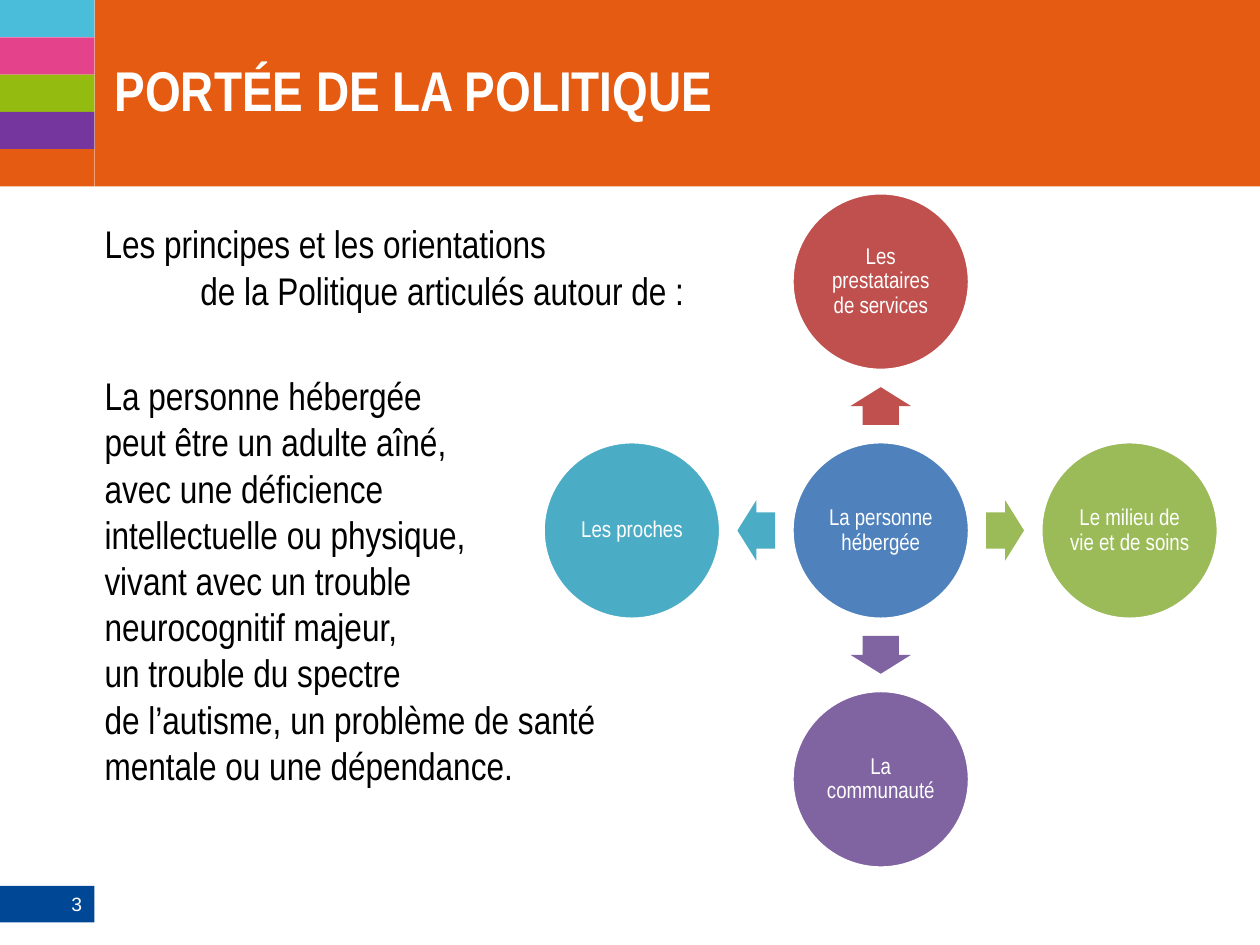
from dataclasses import dataclass

from lxml import etree
from pptx import Presentation
from pptx.dml.color import RGBColor
from pptx.enum import shapes, text
from pptx.util import Inches, Pt


@dataclass(frozen=True)
class Theme:
    font: str = "Arial Narrow"
    number_font: str = "Arial"
    title: int = 32
    body: int = 22
    label: int = 13
    number: int = 11
    white: str = "FFFFFF"
    black: str = "000000"
    orange: str = "E55B12"
    navy: str = "004796"
    hub: str = "4F81BD"
    stripes: tuple = ("4ABDDB", "E5428C", "94BC10", "75369E", "E55B12")


THEME = Theme()

INTRO = "Les principes et les orientations\vde la Politique articulés autour de :"
PERSON = [
    "La personne hébergée",
    "peut être un adulte aîné,",
    "avec une déficience\vintellectuelle ou physique,\vvivant avec un trouble\v"
    "neurocognitif majeur,\vun trouble du spectre\v"
    "de l’autisme, un problème de santé\vmentale ou une dépendance.",
]
# Label, colour, horizontal and vertical direction from the hub, arrow rotation
SPOKES = [
    ("Les prestataires de services", "C0504D", 0, -1, 270),
    ("Le milieu de vie et de soins", "9BBB59", 1, 0, 0),
    ("La communauté", "8064A2", 0, 1, 90),
    ("Les proches", "4BACC6", -1, 0, 180),
]


def set_font(p, size, color, name=THEME.font, bold=False):
    p.font.name, p.font.size, p.font.bold = name, Pt(size), bold
    p.font.color.rgb = RGBColor.from_string(color)


def set_insets(tf, inset):
    tf.margin_left = tf.margin_right = tf.margin_top = tf.margin_bottom = Inches(inset)


def add_filled(slide, kind, box, color):
    sp = slide.shapes.add_shape(kind, *map(Inches, box))
    sp.shadow.inherit = False
    sp.fill.solid()
    sp.fill.fore_color.rgb = RGBColor.from_string(color)
    sp.line.fill.background()
    return sp


def add_header(slide, left, top, width, height, stripe_width):
    rect = shapes.MSO_SHAPE.RECTANGLE
    band = add_filled(slide, rect, (left + stripe_width, top, width - stripe_width, height),
                      THEME.orange)
    step = height / len(THEME.stripes)
    for i, color in enumerate(THEME.stripes):
        add_filled(slide, rect, (left, top + i * step, stripe_width, step), color)

    title = slide.shapes.title
    band.element.addnext(title.element)
    title.left, title.top = Inches(left + 0.91), Inches(top + 0.44)
    title.width, title.height = Inches(8.82), Inches(1.09)
    tf = title.text_frame
    tf.text = "PORTÉE DE LA POLITIQUE"
    tf.vertical_anchor = text.MSO_ANCHOR.TOP
    tf.auto_size = text.MSO_AUTO_SIZE.NONE
    set_insets(tf, 0)
    p = tf.paragraphs[0]
    p.alignment = text.PP_ALIGN.LEFT
    set_font(p, THEME.title, THEME.white, bold=True)


def add_body(slide, *box):
    tf = slide.shapes.add_textbox(*map(Inches, box)).text_frame
    tf.word_wrap = True
    set_insets(tf, 0)
    for i, line in enumerate([INTRO, *PERSON]):
        p = tf.paragraphs[0] if i == 0 else tf.add_paragraph()
        p.text = line
        set_font(p, THEME.body, THEME.black)
    intro, person = tf.paragraphs[:2]
    # Hanging indent: only the second line of the introduction is set in
    pPr = intro._p.get_or_add_pPr()
    pPr.set("marL", str(Inches(0.76)))
    pPr.set("indent", str(-Inches(0.76)))
    person.space_before = Pt(34)


def add_circle(slide, cx, cy, size, label, color):
    sp = add_filled(slide, shapes.MSO_SHAPE.OVAL,
                    (cx - size / 2, cy - size / 2, size, size), color)
    sp.line.color.rgb = RGBColor.from_string(THEME.white)
    sp.line.width = Pt(2)
    tf = sp.text_frame
    tf.word_wrap = True
    tf.vertical_anchor = text.MSO_ANCHOR.MIDDLE
    set_insets(tf, 0.02)
    tf.text = label
    for p in tf.paragraphs:
        p.alignment = text.PP_ALIGN.CENTER
        p.line_spacing = 0.9
        set_font(p, THEME.label, THEME.white)


def add_radial(slide, left, top, size):
    """Hub with four circles around it, in a square box."""
    circle = 1.41
    radius = (size - circle) / 2
    arrow_w, arrow_h = 0.3, 0.48
    cx, cy = left + size / 2, top + size / 2
    add_circle(slide, cx, cy, circle, "La personne\nhébergée", THEME.hub)
    for label, color, dx, dy, angle in SPOKES:
        ax, ay = cx + dx * radius / 2, cy + dy * radius / 2
        arrow = add_filled(slide, shapes.MSO_SHAPE.RIGHT_ARROW,
                           (ax - arrow_w / 2, ay - arrow_h / 2, arrow_w, arrow_h), color)
        arrow.adjustments[0], arrow.adjustments[1] = 0.6, 0.5
        arrow.rotation = angle
        add_circle(slide, cx + dx * radius, cy + dy * radius, circle, label, color)


def add_page_number(slide, *box):
    sp = add_filled(slide, shapes.MSO_SHAPE.RECTANGLE, box, THEME.navy)
    tf = sp.text_frame
    tf.text = "3"
    tf.vertical_anchor = text.MSO_ANCHOR.MIDDLE
    p = tf.paragraphs[0]
    p.alignment = text.PP_ALIGN.RIGHT
    set_font(p, THEME.number, THEME.white, THEME.number_font)


def main():
    prs = Presentation()
    prs.slide_width, prs.slide_height = Inches(10), Inches(7.5)
    slide = prs.slides.add_slide(prs.slide_layouts[5])
    add_header(slide, 0, 0, 10, 1.48, stripe_width=0.75)
    add_page_number(slide, 0, 7.03, 0.75, 0.29)
    add_body(slide, 0.83, 1.75, 8.9, 4.83)
    add_radial(slide, 4.31, 1.53, 5.36)
    prs.save("out.pptx")


if __name__ == "__main__":
    main()
